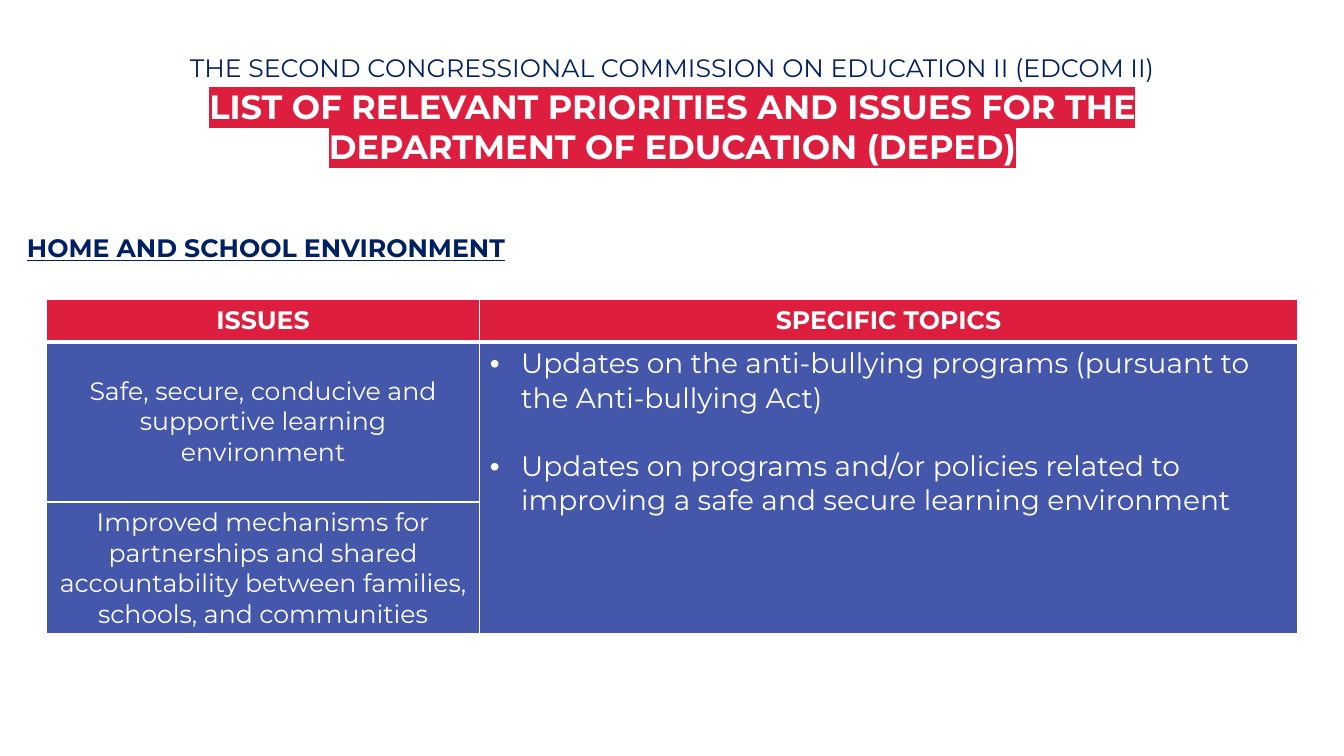
from dataclasses import dataclass

from lxml.etree import SubElement
from pptx import Presentation
from pptx.dml.color import RGBColor as Color
from pptx.enum.text import MSO_ANCHOR as Anchor, MSO_AUTO_SIZE as AutoSize, PP_ALIGN as Align
from pptx.oxml import parse_xml
from pptx.oxml.ns import nsdecls, qn
from pptx.util import Cm, Pt


@dataclass(frozen=True)
class Theme:
    """Colours, type sizes and font of the slide."""
    font: str = "Montserrat"
    navy: str = "002060"
    red: str = "DD1E3E"
    blue: str = "4457AB"
    white: str = "FFFFFF"
    body: int = 18
    topic: int = 20
    title: int = 24
    topic_gap: float = 24.4
    thin: int = 1
    thick: int = 3


class SlideBuilder:
    """Adds themed elements to one slide."""

    def __init__(self, page, theme):
        self.page = page
        self.theme = theme

    def style(self, para, size, color, bold=False, underline=None, align=None):
        """Format a paragraph and its runs."""
        para.alignment = align
        for span in para.runs:
            font = span.font
            font.size = Pt(size)
            font.bold = bold
            font.underline = underline
            font.color.rgb = Color.from_string(color)
            font.name = self.theme.font

    def text(self, left, top, width, height, wording, size, color, **look):
        """Add a wrapping one-paragraph text box and return its paragraph."""
        box = self.page.shapes.add_textbox(Cm(left), Cm(top), Cm(width), Cm(height))
        frame = box.text_frame
        frame.word_wrap = True
        frame.auto_size = AutoSize.SHAPE_TO_FIT_TEXT
        frame.text = wording
        para = frame.paragraphs[0]
        self.style(para, size, color, **look)
        return para

    def highlight(self, para, color):
        """Put a marker colour behind the runs of a paragraph."""
        for span in para.runs:
            fill = span.font._element.find(qn("a:solidFill"))
            fill.addnext(parse_xml(
                f'<a:highlight {nsdecls("a")}><a:srgbClr val="{color}"/></a:highlight>'))

    def table(self, left, top, height, widths, heights):
        """Add a table with the given column widths and row heights."""
        frame = self.page.shapes.add_table(
            len(heights), len(widths), Cm(left), Cm(top), Cm(sum(widths)), Cm(height))
        table = frame.table
        table.horz_banding = False
        for column, width in zip(table.columns, widths):
            column.width = Cm(width)
        for row, size in zip(table.rows, heights):
            row.height = Cm(size)
        return table

    def paint(self, cell, fill, top, bottom):
        """Fill a cell and draw its white borders."""
        thin = self.theme.thin
        cell.fill.solid()
        cell.fill.fore_color.rgb = Color.from_string(fill)
        edges = {"L": thin, "R": thin, "T": top, "B": bottom}
        for index, (side, width) in enumerate(edges.items()):
            cell._tc.get_or_add_tcPr().insert(index, parse_xml(
                f'<a:ln{side} {nsdecls("a")} w="{Pt(width)}"><a:solidFill>'
                f'<a:srgbClr val="{self.theme.white}"/></a:solidFill></a:ln{side}>'))

    def centred(self, cell, wording, bold=False):
        """Write white centred text in a cell."""
        cell.vertical_anchor = Anchor.MIDDLE
        cell.text_frame.text = wording
        for para in cell.text_frame.paragraphs:
            self.style(para, self.theme.body, self.theme.white, bold, align=Align.CENTER)

    def bullets(self, cell, wording):
        """Write a spaced bullet list in a cell."""
        cell.text_frame.text = wording
        for index, para in enumerate(cell.text_frame.paragraphs):
            self.style(para, self.theme.topic, self.theme.white)
            if index:
                para.space_before = Pt(self.theme.topic_gap)
            properties = para._p.get_or_add_pPr()
            properties.set("marL", str(Cm(0.79)))
            properties.set("indent", str(-Cm(0.79)))
            SubElement(properties, qn("a:buFont")).set("typeface", "Arial")
            SubElement(properties, qn("a:buChar")).set("char", "•")


HEADINGS = ("ISSUES", "SPECIFIC TOPICS")
ISSUES = (
    "Safe, secure, conducive and supportive learning environment",
    "Improved mechanisms for partnerships and shared\n"
    "accountability between families, schools, and communities",
)
TOPICS = (
    "Updates on the anti-bullying programs (pursuant to the Anti-bullying Act)\n"
    "Updates on programs and/or policies related to improving a safe and secure "
    "learning environment"
)


def main():
    """Build the slide and save it."""
    theme = Theme()
    deck = Presentation()
    deck.slide_width, deck.slide_height = Cm(33.87), Cm(19.05)
    builder = SlideBuilder(deck.slides.add_slide(deck.slide_layouts[6]), theme)

    builder.text(4.34, 1.19, 25.2, 1.02,
                 "THE SECOND CONGRESSIONAL COMMISSION ON EDUCATION II (EDCOM II)",
                 theme.body, theme.navy, align=Align.CENTER)
    title = builder.text(3.84, 2.03, 26.21, 2.31,
                         "LIST OF RELEVANT PRIORITIES AND ISSUES FOR THE "
                         "DEPARTMENT OF EDUCATION (DEPED)",
                         theme.title, theme.white, bold=True, align=Align.CENTER)
    builder.highlight(title, theme.red)
    builder.text(0.43, 5.74, 14.15, 1.02, "HOME AND SCHOOL ENVIRONMENT",
                 theme.body, theme.navy, bold=True, underline=True)

    table = builder.table(1.17, 7.54, 8.41, (10.92, 20.6), (1.07, 4.04, 2.57))
    for row in range(len(table.rows)):
        fill = theme.blue if row else theme.red
        top = theme.thick if row == 1 else theme.thin
        bottom = theme.thin if row else theme.thick
        for column in range(len(table.columns)):
            builder.paint(table.cell(row, column), fill, top, bottom)
    for column, heading in enumerate(HEADINGS):
        builder.centred(table.cell(0, column), heading, bold=True)
    for row, issue in enumerate(ISSUES, start=1):
        builder.centred(table.cell(row, 0), issue)
    topics = table.cell(1, 1)
    topics.merge(table.cell(2, 1))
    builder.bullets(topics, TOPICS)

    deck.save("out.pptx")


if __name__ == "__main__":
    main()
